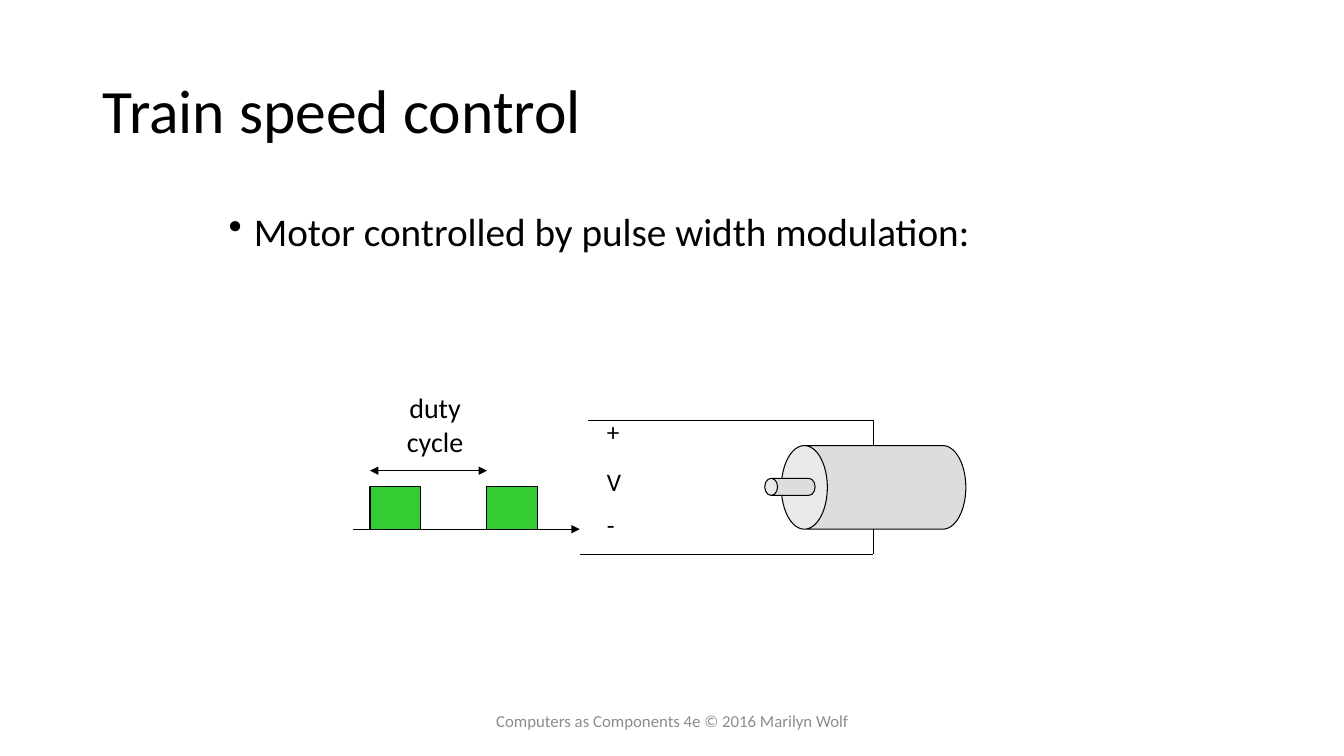
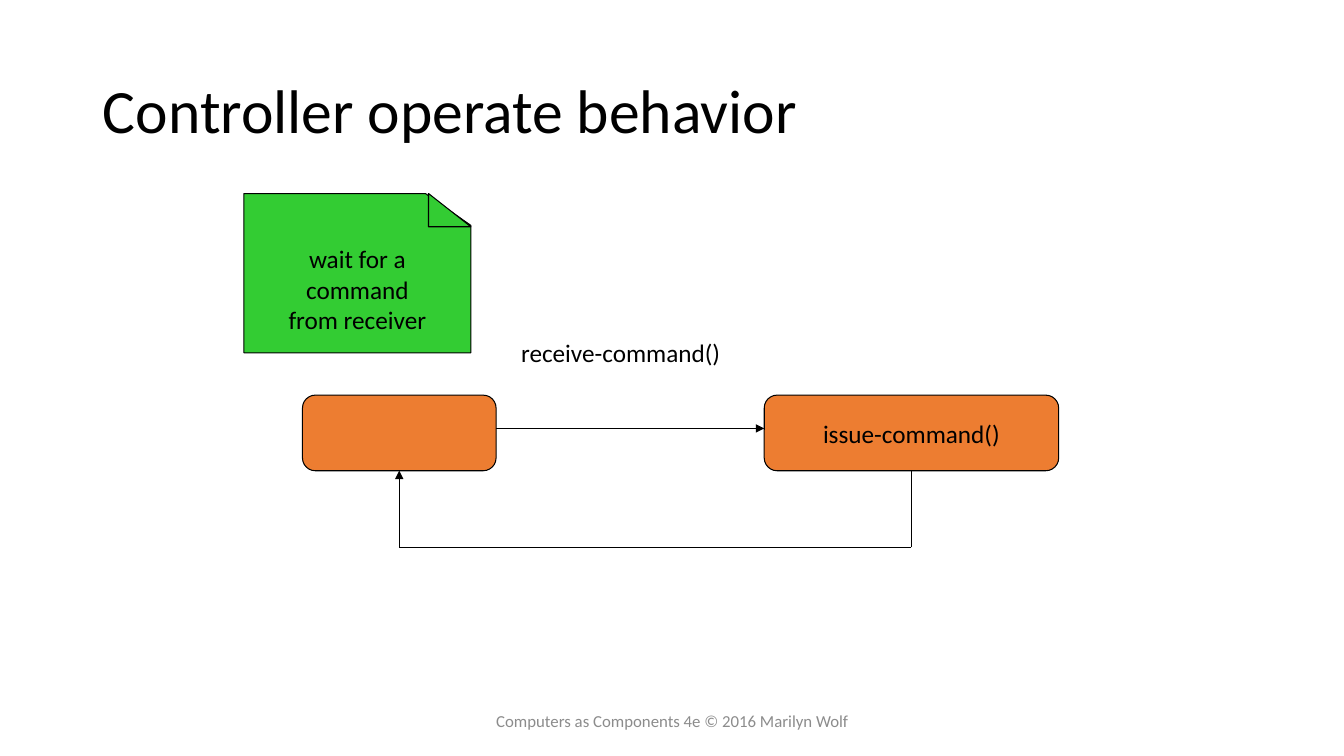
from itertools import pairwise

from lxml.etree import SubElement
from pptx import Presentation
from pptx.dml.color import RGBColor
from pptx.enum.shapes import MSO_CONNECTOR, MSO_SHAPE
from pptx.enum.text import MSO_ANCHOR, PP_ALIGN
from pptx.oxml.ns import qn
from pptx.util import Inches, Pt

FONT = "Calibri"
BLACK, FOOTER_GREY = "000000", "8C8C8C"
GREEN, ORANGE, METAL = "33CC33", "ED7D31", "DDDDDD"
FOOTER = "Computers as Components 4e © 2016 Marilyn Wolf"
FOOTER_BOX = (4.42, 6.95, 4.5, 0.4)
TITLE_BOX = (0.92, 0.4, 11.5, 1.45)

MOTOR = {
    "title": "Train speed control",
    "bullets": [("Motor controlled by pulse width modulation:", (2.17, 2.06, 8.94, 1.35))],
    "shapes": [
        {"preset": MSO_SHAPE.CAN, "box": (8.25, 3.92, 0.83, 1.83), "color": METAL,
         "adjustment": 0.55, "rotation": 270},
        {"preset": MSO_SHAPE.CAN, "box": (7.75, 4.58, 0.17, 0.5), "color": METAL,
         "adjustment": 0.75, "rotation": 270},
    ] + [
        {"preset": MSO_SHAPE.RECTANGLE, "box": (left, 4.83, 0.5, 0.42), "color": GREEN}
        for left in (3.67, 4.83)
    ],
    "routes": [
        {"points": [(8.66, 4.41), (8.66, 4.17), (5.83, 4.17)]},
        {"points": [(8.66, 5.25), (8.66, 5.5), (5.75, 5.5)]},
        {"points": [(3.5, 5.25), (5.75, 5.25)], "tail": True},
        {"points": [(3.67, 4.67), (4.83, 4.67)], "head": True, "tail": True},
    ],
    "labels": [
        (["+"], (5.92, 4.08, 0.33, 0.4), {}),
        (["V"], (5.92, 4.58, 0.35, 0.4), {}),
        (["-"], (5.92, 5, 0.28, 0.4), {}),
        (["duty", "cycle"], (3.92, 3.83, 0.79, 0.77), {"size": 20, "align": PP_ALIGN.CENTER}),
    ],
}

CONTROLLER = {
    "title": "Controller operate behavior",
    "bullets": [],
    "shapes": [
        {"preset": MSO_SHAPE.ROUNDED_RECTANGLE, "box": (7.58, 3.92, 2.92, 0.75),
         "color": ORANGE, "adjustment": 0.17, "lines": ["issue-command()"]},
        {"preset": MSO_SHAPE.ROUNDED_RECTANGLE, "box": (3, 3.92, 1.92, 0.75),
         "color": ORANGE, "adjustment": 0.17},
        {"preset": MSO_SHAPE.FLOWCHART_CARD, "box": (2.42, 1.92, 2.25, 1.58), "color": GREEN,
         "mirrored": True, "lines": ["wait for a", "command", "from receiver"]},
        {"preset": MSO_SHAPE.RIGHT_TRIANGLE, "box": (4.25, 1.92, 0.42, 0.33), "color": GREEN},
    ],
    "routes": [
        {"points": [(4.92, 4.25), (7.58, 4.25)], "tail": True},
        {"points": [(9.04, 4.67), (9.04, 5.43), (3.96, 5.43), (3.96, 4.67)], "tail": True},
    ],
    "labels": [(["receive-command()"], (5.07, 3.3, 2.2, 0.4), {})],
}


def rgb(color):
    return RGBColor.from_string(color)


def inches(values):
    return [Inches(value) for value in values]


def write_text(shape, lines, size=18, color=BLACK, align=PP_ALIGN.LEFT,
               anchor=MSO_ANCHOR.TOP, wrap=False, line_spacing=None):
    frame = shape.text_frame
    frame.word_wrap = wrap
    frame.vertical_anchor = anchor
    frame.text = "\n".join(lines)
    for paragraph in frame.paragraphs:
        paragraph.alignment = align
        paragraph.line_spacing = line_spacing
        paragraph.font.name = FONT
        paragraph.font.size = Pt(size)
        paragraph.font.color.rgb = rgb(color)


def add_label(slide, lines, box, **text_format):
    label = slide.shapes.add_textbox(*inches(box))
    write_text(label, lines, **text_format)
    return label


def add_bullet(slide, text, box):
    label = add_label(slide, [text], box, size=28, wrap=True, line_spacing=0.9)
    paragraph = label.text_frame.paragraphs[0]
    paragraph.space_before = Pt(10)
    properties = paragraph._p.get_or_add_pPr()
    properties.set("marL", str(Inches(0.25)))
    properties.set("indent", str(Inches(-0.25)))
    bullet = properties.makeelement(qn("a:buChar"), {"char": "•"})
    properties.insert_element_before(bullet, "a:tabLst", "a:defRPr", "a:extLst")


def add_shape(slide, preset, box, color, adjustment=None, rotation=0,
              mirrored=False, lines=()):
    shape = slide.shapes.add_shape(preset, *inches(box))
    shape.shadow.inherit = False
    shape.fill.solid()
    shape.fill.fore_color.rgb = rgb(color)
    shape.line.color.rgb = rgb(BLACK)
    shape.line.width = Pt(0.75)
    shape.rotation = rotation
    if adjustment is not None:
        shape.adjustments[0] = adjustment
    if mirrored:
        shape._element.spPr.find(qn("a:xfrm")).set("flipH", "1")
    if lines:
        write_text(shape, lines, align=PP_ALIGN.CENTER, anchor=MSO_ANCHOR.MIDDLE)


def add_route(slide, points, head=False, tail=False):
    segments = list(pairwise(points))
    for index, (start, end) in enumerate(segments):
        connector = slide.shapes.add_connector(
            MSO_CONNECTOR.STRAIGHT, *inches(start + end))
        connector.line.color.rgb = rgb(BLACK)
        connector.line.width = Pt(0.75)
        line = connector.line._get_or_add_ln()
        if head and index == 0:
            SubElement(line, qn("a:headEnd"), type="triangle")
        if tail and index == len(segments) - 1:
            SubElement(line, qn("a:tailEnd"), type="triangle")
        SubElement(connector._element.spPr, qn("a:effectLst"))


def add_title(slide, text):
    title = slide.shapes.title
    title.left, title.top, title.width, title.height = inches(TITLE_BOX)
    write_text(title, [text], size=44, anchor=MSO_ANCHOR.MIDDLE, wrap=True, line_spacing=0.9)


def build_slide(presentation, content):
    slide = presentation.slides.add_slide(presentation.slide_layouts[5])
    add_title(slide, content["title"])
    for text, box in content["bullets"]:
        add_bullet(slide, text, box)
    for shape in content["shapes"]:
        add_shape(slide, **shape)
    for route in content["routes"]:
        add_route(slide, **route)
    for lines, box, text_format in content["labels"]:
        add_label(slide, lines, box, **text_format)
    add_label(slide, [FOOTER], FOOTER_BOX, size=12, color=FOOTER_GREY,
              align=PP_ALIGN.CENTER, anchor=MSO_ANCHOR.MIDDLE, wrap=True)


def main():
    presentation = Presentation()
    presentation.slide_width = Inches(13.33)
    presentation.slide_height = Inches(7.5)
    for content in (MOTOR, CONTROLLER):
        build_slide(presentation, content)
    presentation.save("out.pptx")


if __name__ == "__main__":
    main()
